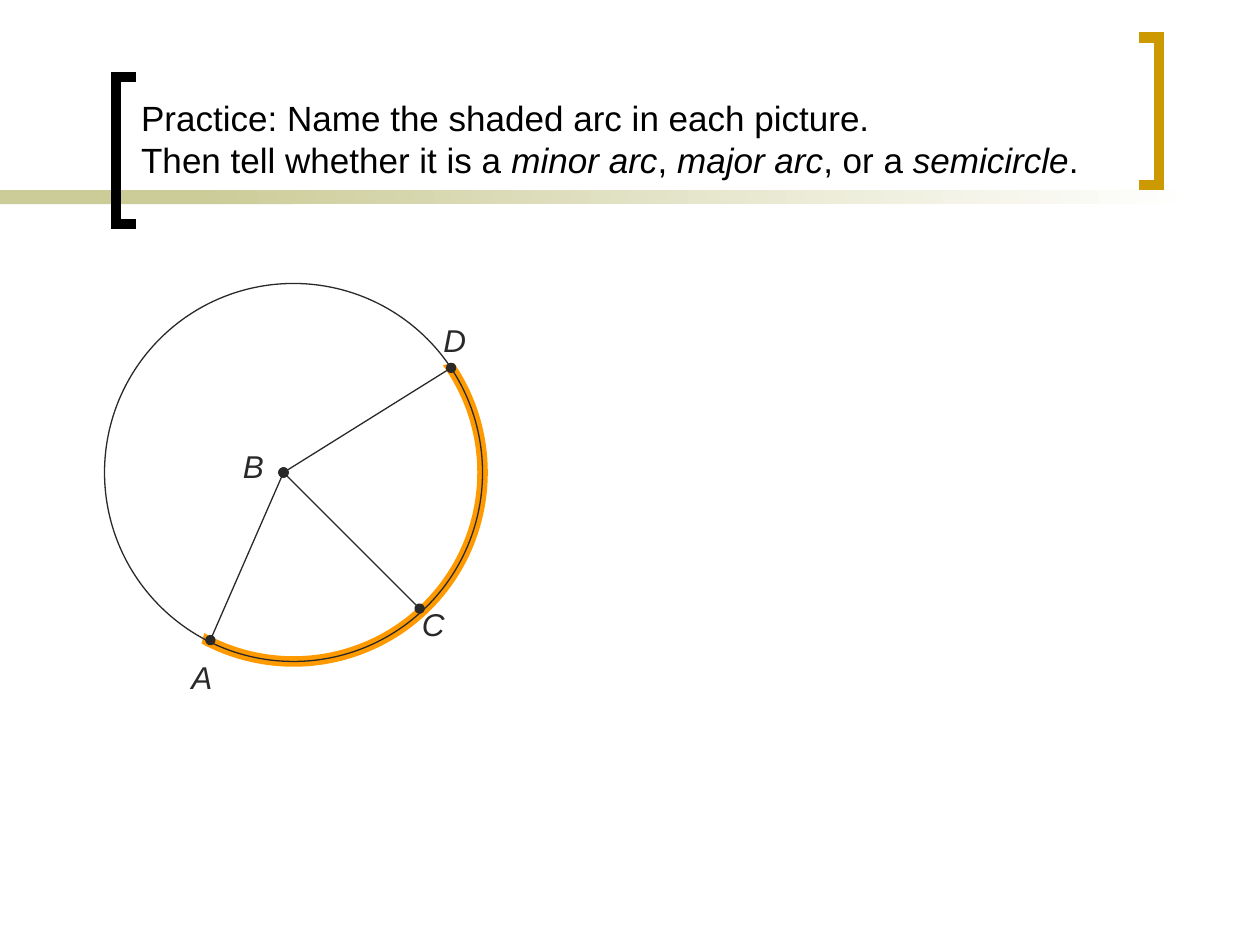
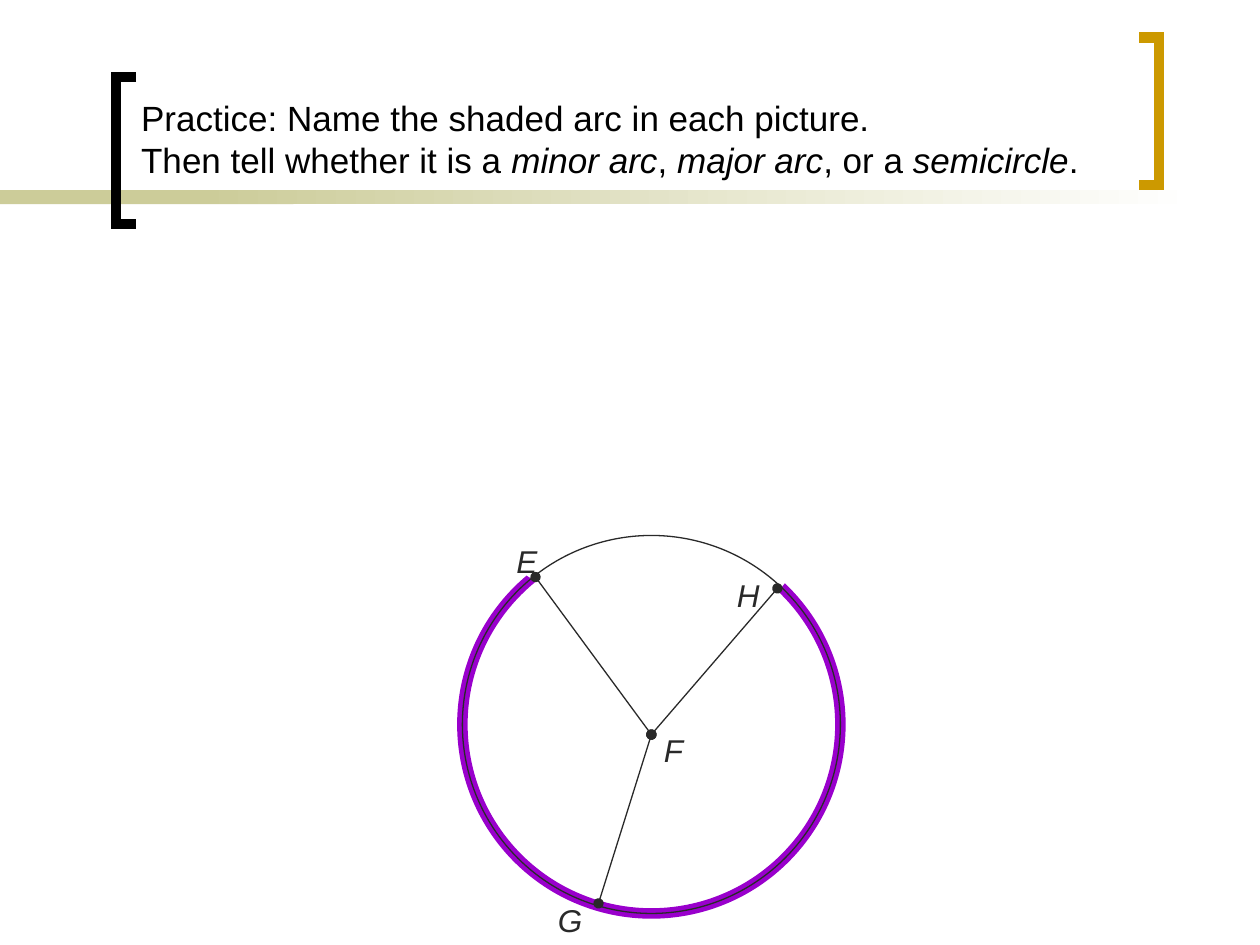
from lxml import etree
from pptx import Presentation
from pptx import util as u
from pptx.dml import color
from pptx.enum import shapes, text
from pptx.oxml import ns

BLACK, INK, WHITE = "000000", "292929", "FFFFFF"
SAND, GOLD, ORANGE, PURPLE = "CCCC99", "CC9900", "FF9900", "9900CC"
FONT = "Arial"
SIZE = 3  # diameter of each circle
THIN, THICK = 0.75, 6

LEAD = "Practice: Name the shaded arc in each picture.\vThen tell whether it is a "
KINDS = [("minor arc", True), (", ", False), ("major arc", True),
         (", or a ", False), ("semicircle", True), (".", False)]


def rgb(code):
    return color.RGBColor.from_string(code)


def add_tag(parent, name, **attrs):
    return etree.SubElement(parent, ns.qn(name), attrs)


def set_line(shape, code, width):
    shape.line.color.rgb = rgb(code)
    shape.line.width = u.Pt(width)


def set_font(run, size, code, slant):
    run.font.name = FONT
    run.font.size = u.Pt(size)
    run.font.color.rgb = rgb(code)
    run.font.italic = slant


def add_band(slide, left, width):
    band = slide.shapes.add_shape(shapes.MSO_SHAPE.RECTANGLE, u.Inches(left),
                                  u.Inches(1.51), u.Inches(width), u.Inches(0.11))
    band.shadow.inherit = False
    band.line.fill.background()
    return band


def add_path(slide, points, close):
    start, *rest = [(u.Inches(x), u.Inches(y)) for x, y in points]
    pen = slide.shapes.build_freeform(*start)
    pen.add_line_segments(rest, close=close)
    shape = pen.convert_to_shape()
    shape.shadow.inherit = False
    return shape


def add_bracket(slide, tip, back, top, code):
    low = top + 1.17
    shape = add_path(slide, [(tip, top), (back, top), (back, low), (tip, low)], False)
    shape.fill.background()
    set_line(shape, code, THICK)
    add_tag(shape.line._get_or_add_ln(), "a:miter", lim="800000")
    return shape


def add_ring(slide, left, top, code, width):
    ring = slide.shapes.add_shape(shapes.MSO_SHAPE.OVAL, u.Inches(left),
                                  u.Inches(top), u.Inches(SIZE), u.Inches(SIZE))
    ring.shadow.inherit = False
    ring.fill.background()
    set_line(ring, code, width)


def add_mask(slide, points):
    mask = add_path(slide, points, True)
    mask.fill.solid()
    mask.fill.fore_color.rgb = rgb(WHITE)
    mask.line.fill.background()


def add_spoke(slide, start, end):
    spoke = slide.shapes.add_connector(shapes.MSO_CONNECTOR.STRAIGHT,
                                       *(u.Inches(v) for v in start + end))
    set_line(spoke, INK, THIN)
    line = spoke.line._get_or_add_ln()
    add_tag(line, "a:headEnd", type="oval")
    add_tag(line, "a:tailEnd", type="oval")
    add_tag(spoke.element.spPr, "a:effectLst")


def add_label(slide, name, left, top):
    box = slide.shapes.add_textbox(u.Inches(left), u.Inches(top),
                                   u.Inches(0.67), u.Inches(0.4))
    frame = box.text_frame
    frame.word_wrap = True
    frame.text = name
    set_font(frame.paragraphs[0].runs[0], 18, INK, True)


def set_frame(layout, slide):
    """Draw the bands and brackets, then move them to the shared layout."""
    for holder in list(layout.placeholders):
        if holder.placeholder_format.type != shapes.PP_PLACEHOLDER.TITLE:
            holder.element.getparent().remove(holder.element)
    title = layout.placeholders[0]
    title.left, title.top = u.Inches(1.02), u.Inches(0.58)
    title.width, title.height = u.Inches(7.83), u.Inches(0.9)

    solid = add_band(slide, 0, 2.33)
    solid.fill.solid()
    solid.fill.fore_color.rgb = rgb(SAND)
    fade = add_band(slide, 1.58, 7.92)
    fade.fill.gradient()
    fade.fill.gradient_angle = 0
    for stop, code in zip(fade.fill.gradient_stops, (SAND, WHITE)):
        stop.color.rgb = rgb(code)
    black = add_bracket(slide, 1.08, 0.92, 0.61, BLACK)
    gold = add_bracket(slide, 9.04, 9.2, 0.3, GOLD)
    for part in (solid, fade, black, gold):
        layout.shapes.element.append(part.element)


def add_title(slide):
    frame = slide.shapes.title.text_frame
    frame.vertical_anchor = text.MSO_ANCHOR.BOTTOM
    frame.auto_size = text.MSO_AUTO_SIZE.NONE
    para = frame.paragraphs[0]
    para.text = LEAD
    para.alignment = text.PP_ALIGN.LEFT
    for run in para.runs:
        set_font(run, 20, BLACK, False)
    for words, slant in KINDS:
        run = para.add_run()
        run.text = words
        set_font(run, 20, BLACK, slant)


def draw_arc(slide, left, top, code, mask, hub, ends, labels):
    """Show a shaded arc: thick ring, mask over the rest, thin ring, spokes."""
    add_ring(slide, left, top, code, THICK)
    add_mask(slide, mask)
    add_ring(slide, left, top, INK, THIN)
    for end in ends:
        add_spoke(slide, hub, end)
    for name, x, y in labels:
        add_label(slide, name, x, y)


def main():
    deck = Presentation()
    deck.slide_width, deck.slide_height = u.Inches(10), u.Inches(7.5)
    layout = deck.slide_layouts[5]
    first, second = [deck.slides.add_slide(layout) for _ in range(2)]
    set_frame(layout, first)
    for slide in (first, second):
        add_title(slide)

    # Arc from A through C to D
    draw_arc(first, 0.83, 2.25, ORANGE,
             mask=[(1.67, 4.83), (1.5, 5.5), (0.25, 3.67), (1.25, 2.25), (3.25, 2),
                   (4, 2.75), (3.83, 2.83), (3.42, 2.92), (1.83, 3.58)],
             hub=(2.25, 3.75),
             ends=[(3.58, 2.92), (3.33, 4.83), (1.67, 5.08)],
             labels=[("A", 1.42, 5.17), ("B", 1.83, 3.5),
                     ("C", 3.25, 4.75), ("D", 3.42, 2.5)])

    # Arc from E through G to H
    draw_arc(second, 3.67, 4.25, PURPLE,
             mask=[(4.08, 4.5), (4.33, 4.67), (6, 4.92), (6.33, 4.5), (7, 5.75),
                   (7.17, 7), (7.33, 5.5), (6.08, 4.17), (4.58, 3.83)],
             hub=(5.17, 5.83),
             ends=[(6.17, 4.67), (4.25, 4.58), (4.75, 7.17)],
             labels=[("E", 4, 4.25), ("F", 5.17, 5.75),
                     ("G", 4.33, 7.1), ("H", 5.75, 4.52)])

    deck.save("out.pptx")


if __name__ == "__main__":
    main()
